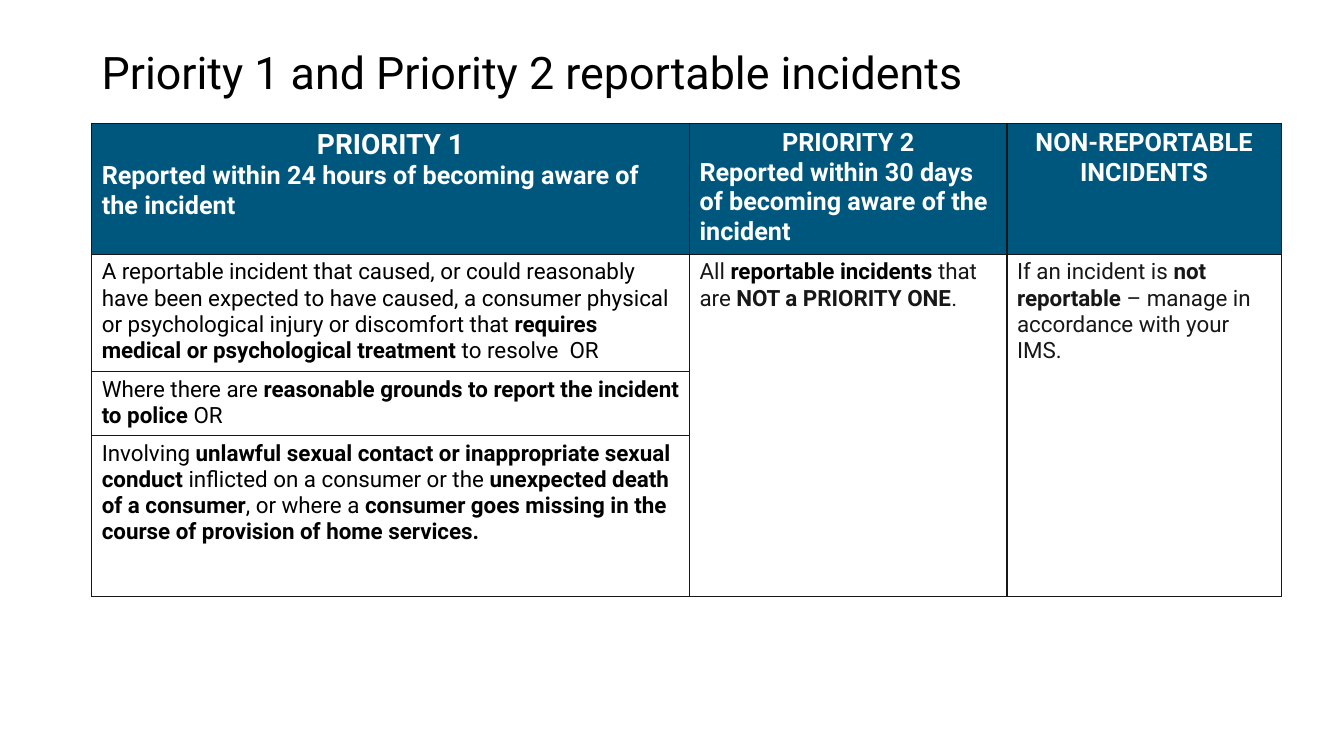
from lxml import etree
from pptx import Presentation
from pptx.dml.color import RGBColor
from pptx.enum import text as enum_text
from pptx.oxml import ns
from pptx.util import Pt

COLORS = {"header": "00577D", "white": "FFFFFF", "black": "000000", "ink": "181717"}
FONT = "Roboto"
ALIGN = enum_text.PP_ALIGN

COLUMN_WIDTHS = [427, 226.8, 195.8]
ROW_HEIGHTS = [91.4, 81.4, 45, 115]

# Header cells: title, title size, deadline
HEADERS = [
    ("PRIORITY 1", 20, "Reported within 24 hours of becoming aware of the incident"),
    ("PRIORITY 2", 18, "Reported within 30 days of becoming aware of the incident"),
    ("NON-REPORTABLE INCIDENTS", 18, None),
]

# Body cells: row, column, text colour, runs that alternate between regular and bold
BODY = [
    (1, 0, "black", [
        "A reportable incident that caused, or could reasonably have been expected to have "
        "caused, a consumer physical or psychological injury or discomfort that ",
        "requires medical or psychological treatment ",
        "to resolve  OR"]),
    (2, 0, "black", [
        "Where there are ",
        "reasonable grounds to report the incident to police ",
        "OR"]),
    (3, 0, "black", [
        "Involving ",
        "unlawful sexual contact or inappropriate sexual conduct ",
        "inflicted on a consumer or the ",
        "unexpected death of a consumer",
        ", or where a ",
        "consumer goes missing in the course of provision of home services."]),
    (1, 1, "ink", [
        "All ", "reportable incidents ", "that are ", "NOT a PRIORITY ONE", "."]),
    (1, 2, "ink", [
        "If an incident is ", "not reportable",
        " – manage in accordance with your IMS."]),
]


def add_run(paragraph, content, size=16, color="black", bold=False):
    run = paragraph.add_run()
    run.text = content
    run.font.name = FONT
    run.font.size = Pt(size)
    run.font.bold = bold
    run.font.color.rgb = RGBColor.from_string(COLORS[color])


def add_title(slide, left, top, width, height):
    frame = slide.shapes.add_textbox(Pt(left), Pt(top), Pt(width), Pt(height)).text_frame
    frame.word_wrap = True
    frame.vertical_anchor = enum_text.MSO_ANCHOR.TOP
    paragraph = frame.paragraphs[0]
    paragraph.line_spacing = 0.9
    add_run(paragraph, "Priority 1 and Priority 2 reportable incidents", size=32)


def add_borders(cell):
    properties = cell._tc.get_or_add_tcPr()
    for side in ("a:lnL", "a:lnR", "a:lnT", "a:lnB"):
        line = etree.SubElement(properties, ns.qn(side), w=str(Pt(1)))
        fill = etree.SubElement(line, ns.qn("a:solidFill"))
        etree.SubElement(fill, ns.qn("a:srgbClr"), val=COLORS["ink"])


def add_incident_table(slide, left, top):
    table = slide.shapes.add_table(
        len(ROW_HEIGHTS), len(COLUMN_WIDTHS), Pt(left), Pt(top),
        Pt(sum(COLUMN_WIDTHS)), Pt(sum(ROW_HEIGHTS))).table
    table.first_row = table.horz_banding = False
    for column, width in zip(table.columns, COLUMN_WIDTHS):
        column.width = Pt(width)
    for row, height in zip(table.rows, ROW_HEIGHTS):
        row.height = Pt(height)

    # Borders and fills
    for cell in table.iter_cells():
        add_borders(cell)
        cell.fill.background()

    # Header row
    for column, (title, size, deadline) in enumerate(HEADERS):
        cell = table.cell(0, column)
        cell.fill.solid()
        cell.fill.fore_color.rgb = RGBColor.from_string(COLORS["header"])
        paragraph = cell.text_frame.paragraphs[0]
        paragraph.alignment = ALIGN.CENTER
        add_run(paragraph, title, size=size, color="white", bold=True)
        if deadline:
            paragraph = cell.text_frame.add_paragraph()
            paragraph.alignment = ALIGN.LEFT
            add_run(paragraph, deadline, size=18, color="white", bold=True)

    # Body, with the last two columns merged downwards
    for column in (1, 2):
        table.cell(1, column).merge(table.cell(3, column))
    for row, column, color, runs in BODY:
        paragraph = table.cell(row, column).text_frame.paragraphs[0]
        for index, content in enumerate(runs):
            run_color = "black" if content == "reportable incidents " else color
            add_run(paragraph, content, color=run_color, bold=index % 2 == 1)


def main():
    presentation = Presentation()
    presentation.slide_width, presentation.slide_height = Pt(960), Pt(540)
    slide = presentation.slides.add_slide(presentation.slide_layouts[6])
    add_title(slide, 65.5, 32.4, 784, 72)
    add_incident_table(slide, 65.5, 88)
    presentation.save("out.pptx")


if __name__ == "__main__":
    main()
